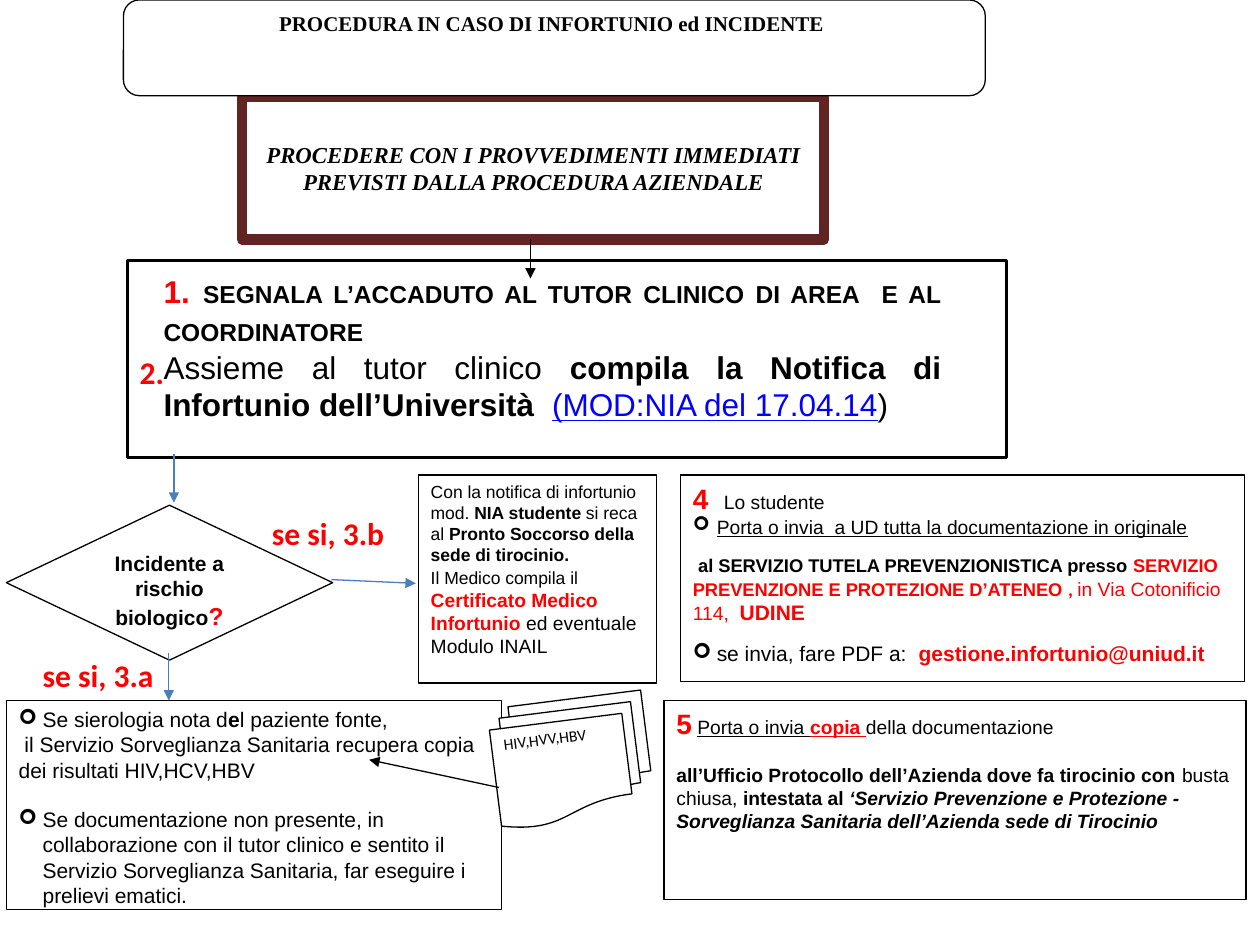
from dataclasses import dataclass

from lxml import etree
from pptx import Presentation
from pptx import util as u
from pptx.dml import color
from pptx.enum import shapes, text
from pptx.oxml import ns

BLACK, WHITE, RED, BLUE, LINK = "000000", "FFFFFF", "FF0000", "4B7EBC", "0000FF"
SHAPE, ALIGN = shapes.MSO_SHAPE, text.PP_ALIGN
SERIF = "Times New Roman"


@dataclass
class Run:
    text: str
    size: float
    color: str = BLACK
    bold: bool = False
    italic: bool = False
    underline: bool = False
    font: str = "Arial"


@dataclass
class Para:
    runs: list[Run]
    align: ALIGN = ALIGN.LEFT
    bullet: bool = False
    before: float = 0


@dataclass
class Box:
    at: tuple[float, float, float, float]
    paras: list[Para]
    kind: SHAPE = SHAPE.RECTANGLE
    line: str = BLACK
    width: float = 0.75
    rotation: float = 0
    anchor: text.MSO_ANCHOR = text.MSO_ANCHOR.TOP
    insets: tuple[float, float] = (0.1, 0.05)


@dataclass
class Label:
    at: tuple[float, float, float, float]
    paras: list[Para]
    wrap: bool = True


@dataclass
class Arrow:
    start: tuple[float, float]
    end: tuple[float, float]
    color: str = BLUE


def rgb(value: str) -> color.RGBColor:
    return color.RGBColor.from_string(value)


def inches(values: tuple[float, ...]) -> list[u.Length]:
    return [u.Inches(v) for v in values]


def write(tf, paras: list[Para]) -> None:
    for i, para in enumerate(paras):
        p = tf.paragraphs[0] if i == 0 else tf.add_paragraph()
        p.alignment = para.align
        p.space_before = u.Pt(para.before)
        if para.bullet:
            pPr = p._p.get_or_add_pPr()
            pPr.set("marL", str(u.Inches(0.19)))
            pPr.set("indent", str(u.Inches(-0.19)))
            etree.SubElement(pPr, ns.qn("a:buFont"), typeface="Wingdings")
            etree.SubElement(pPr, ns.qn("a:buChar"), char="➢")
        for run in para.runs:
            r = p.add_run()
            r.text = run.text
            f = r.font
            f.name, f.size = run.font, u.Pt(run.size)
            f.bold, f.italic, f.underline = run.bold, run.italic, run.underline
            f.color.rgb = rgb(run.color)


def draw_box(s, box: Box) -> None:
    sp = s.shapes.add_shape(box.kind, *inches(box.at))
    sp.shadow.inherit = False
    sp.rotation = box.rotation
    sp.fill.solid()
    sp.fill.fore_color.rgb = rgb(WHITE)
    sp.line.color.rgb = rgb(box.line)
    sp.line.width = u.Pt(box.width)
    tf = sp.text_frame
    tf.word_wrap = True
    tf.vertical_anchor = box.anchor
    tf.margin_left = tf.margin_right = u.Inches(box.insets[0])
    tf.margin_top = tf.margin_bottom = u.Inches(box.insets[1])
    write(tf, box.paras)


def draw_label(s, label: Label) -> None:
    tf = s.shapes.add_textbox(*inches(label.at)).text_frame
    tf.word_wrap = label.wrap
    tf.auto_size = text.MSO_AUTO_SIZE.SHAPE_TO_FIT_TEXT
    write(tf, label.paras)


def draw_arrow(s, arrow: Arrow) -> None:
    cx = s.shapes.add_connector(shapes.MSO_CONNECTOR.STRAIGHT, *inches(arrow.start + arrow.end))
    cx.line.color.rgb = rgb(arrow.color)
    cx.line.width = u.Pt(0.75)
    etree.SubElement(cx.line._get_or_add_ln(), ns.qn("a:tailEnd"), type="triangle")
    etree.SubElement(cx._element.spPr, ns.qn("a:effectLst"))


def step(caption: str) -> list[Para]:
    return [Para([Run(caption, 18, RED, True, font="Calibri")])]


TITLE = [Para([Run("PROCEDURA IN CASO DI INFORTUNIO ed INCIDENTE ", 12, bold=True, font=SERIF)], ALIGN.CENTER)]
MEASURES = [Para([Run("PROCEDERE CON I PROVVEDIMENTI IMMEDIATI PREVISTI DALLA PROCEDURA AZIENDALE",
                      13, bold=True, italic=True, font=SERIF)], ALIGN.CENTER)]
QUESTION = [Para([Run("Incidente a rischio biologico", 12, bold=True), Run("?", 14, RED, True)], ALIGN.CENTER)]
SEROLOGY = [
    Para([Run("Se sierologia nota d", 12), Run("e", 12, bold=True), Run("l paziente fonte,", 12)], bullet=True),
    Para([Run(" il Servizio Sorveglianza Sanitaria recupera copia dei risultati HIV,HCV,HBV", 12)]),
    Para([Run("Se documentazione non presente, in collaborazione con il tutor clinico e sentito il "
              "Servizio Sorveglianza Sanitaria, far eseguire i prelievi ematici.", 12)], bullet=True, before=14),
]
EMERGENCY = [
    Para([Run("Con la notifica di infortunio mod. ", 10), Run("NIA studente ", 10, bold=True),
          Run("si reca al", 10), Run(" Pronto Soccorso della sede di tirocinio.", 10, bold=True)]),
    Para([Run("Il Medico compila il", 10), Run(" ", 11),
          Run("Certificato Medico Infortunio ", 11, RED, True), Run("ed eventuale Modulo INAIL", 11)]),
]
TESTS = [Para([Run("HIV,HVV,HBV", 9, font="Calibri")])]
STUDENT = [
    Para([Run("4  ", 16, RED, True), Run("Lo studente", 11)]),
    Para([Run("Porta o invia  a UD tutta la documentazione in originale", 11, underline=True)], bullet=True),
    Para([Run(" ", 11), Run("al SERVIZIO TUTELA PREVENZIONISTICA presso ", 10.5, bold=True),
          Run("SERVIZIO PREVENZIONE E PROTEZIONE D’ATENEO ", 10.5, RED, True),
          Run(", ", 11, RED, True, font="Calibri"), Run("in Via Cotonificio 114,  ", 11, RED),
          Run("UDINE", 12, RED, True)], before=9),
    Para([Run("se invia, fare PDF a:  ", 12), Run("gestione.infortunio@uniud.it", 12, RED, True)],
         bullet=True, before=9),
]
COPY = [
    Para([Run("5", 16, RED, True), Run(" ", 11, bold=True), Run("Porta o invia ", 11, underline=True),
          Run("copia ", 11, RED, True, underline=True), Run("della documentazione", 11)]),
    Para([Run("all’Ufficio Protocollo dell’Azienda dove fa tirocinio con ", 11, bold=True),
          Run("busta chiusa, ", 11), Run("intestata al ", 11, bold=True),
          Run("‘Servizio Prevenzione e Protezione - Sorveglianza Sanitaria dell’Azienda sede di Tirocinio",
              11, bold=True, italic=True)], before=13),
]
REPORT = [
    Para([Run("1. ", 18, RED, True),
          Run("SEGNALA L’ACCADUTO AL TUTOR CLINICO DI AREA  E AL COORDINATORE", 14, bold=True),
          Run(" ", 18, bold=True)], ALIGN.JUSTIFY),
    Para([Run("Assieme al tutor clinico ", 18),
          Run("compila la Notifica di Infortunio dell’Università  ", 18, bold=True),
          Run("(MOD:NIA del 17.04.14", 18, LINK, underline=True), Run(")", 18)], ALIGN.JUSTIFY),
]

BOXES = [
    Box((1.92, 0.77, 4.62, 1.13), MEASURES, line="622423", width=6,
        anchor=text.MSO_ANCHOR.MIDDLE, insets=(0.15, 0.1)),
    Box((1.01, 2.07, 6.98, 1.56), [], width=1.5),
    Box((0.05, 5.56, 3.93, 1.66), SEROLOGY),
    Box((0.05, 4.01, 2.59, 1.23), QUESTION, SHAPE.DIAMOND),
    Box((3.32, 3.77, 1.89, 1.65), EMERGENCY),
    Box((3.92, 5.55, 1.23, 0.97), TESTS, SHAPE.FLOWCHART_MULTIDOCUMENT, rotation=352.8),
    Box((5.4, 3.77, 4.48, 1.64), STUDENT),
    Box((0.98, 0, 6.84, 0.76), TITLE, SHAPE.ROUNDED_RECTANGLE),
    Box((5.27, 5.56, 4.62, 1.58), COPY),
]
LABELS = [
    Label((1.2, 2.11, 6.37, 1.31), REPORT),
    Label((1.01, 2.75, 0.44, 0.4), step("2.")),
    Label((2.06, 4.03, 1.1, 0.4), step("se si, 3.b"), wrap=False),
    Label((0.24, 5.16, 1.09, 0.4), step("se si, 3.a"), wrap=False),
]
ARROWS = [
    Arrow((4.21, 1.9), (4.21, 2.21), BLACK),
    Arrow((3.96, 6.25), (2.93, 6.03), BLACK),
    Arrow((1.34, 5.18), (1.34, 5.56)),
    Arrow((1.38, 3.6), (1.38, 3.99)),
    Arrow((2.63, 4.6), (3.3, 4.63)),
]


def main() -> None:
    prs = Presentation()
    prs.slide_width, prs.slide_height = u.Inches(10), u.Inches(7.5)
    s = prs.slides.add_slide(prs.slide_layouts[6])
    for draw, items in ((draw_box, BOXES), (draw_label, LABELS), (draw_arrow, ARROWS)):
        for item in items:
            draw(s, item)
    prs.save("out.pptx")


if __name__ == "__main__":
    main()
